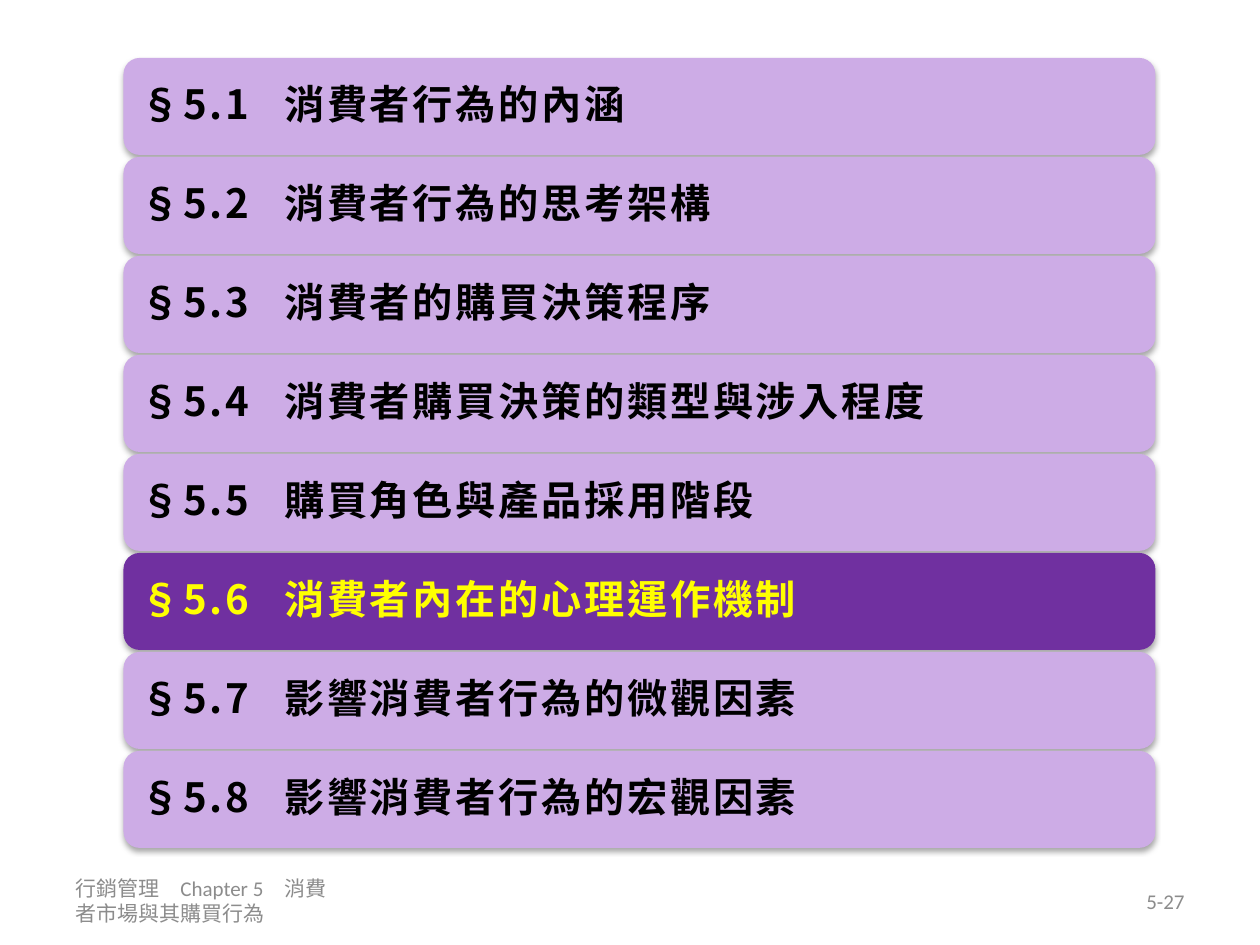
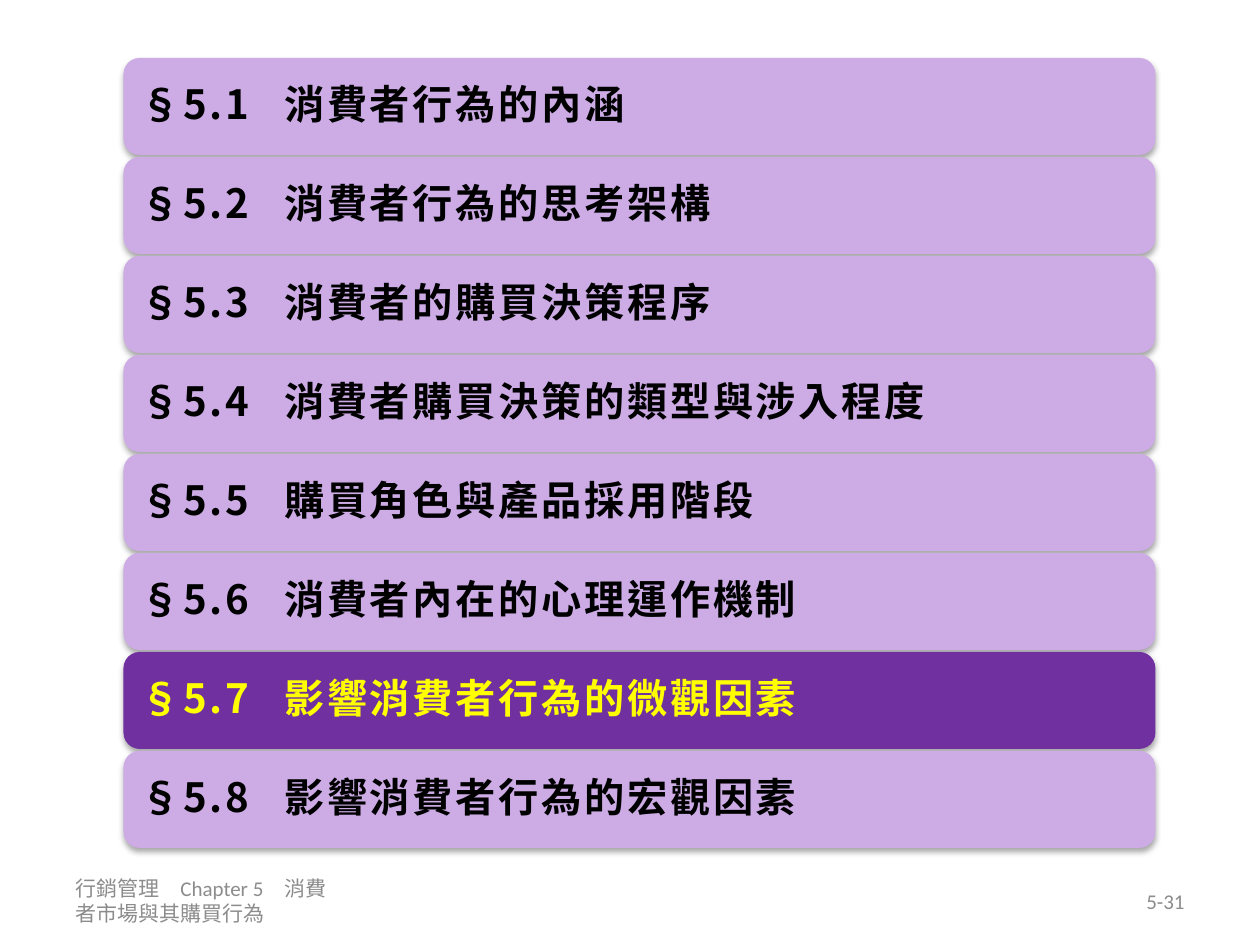
import pptx
import pptx.util
import pptx.dml.color
import pptx.enum.shapes
import pptx.enum.text
import pptx.oxml
import pptx.oxml.ns
from dataclasses import dataclass
from lxml import etree

Inches = pptx.util.Inches
Pt = pptx.util.Pt
qn = pptx.oxml.ns.qn
ALIGN = pptx.enum.text.PP_ALIGN


@dataclass(frozen=True)
class Theme:
    band: str = "CDACE6"
    band_text: str = "000000"
    active: str = "7030A0"
    active_text: str = "FFFF00"
    footer: str = "8C8C8C"
    shadow: str = "000000"
    latin: str = "Calibri"
    cjk: str = "Noto Sans CJK SC"
    band_size: int = 23
    footer_size: int = 12


SECTIONS = [
    "消費者行為的內涵",
    "消費者行為的思考架構",
    "消費者的購買決策程序",
    "消費者購買決策的類型與涉入程度",
    "購買角色與產品採用階段",
    "消費者內在的心理運作機制",
    "影響消費者行為的微觀因素",
    "影響消費者行為的宏觀因素",
]
FOOTER = "行銷管理　Chapter 5　消費者市場與其購買行為"
FIRST_TOP, LAST_TOP = 0.46, 5.96
TITLE_TAB = 1.14

# Slide number and the section highlighted on it
AGENDAS = [("5-27", 6), ("5-31", 7)]


def rgb(value):
    return pptx.dml.color.RGBColor.from_string(value)


class Deck:
    def __init__(self, theme):
        self.theme = theme
        self.prs = pptx.Presentation()
        self.prs.slide_width = Inches(10)
        self.prs.slide_height = Inches(7.5)
        self.s = None

    def new_slide(self):
        self.s = self.prs.slides.add_slide(self.prs.slide_layouts[6])

    def label(self, sp, text, font, size, color, align=ALIGN.LEFT,
              bold=False, spacing=0, tab=None):
        tf = sp.text_frame
        tf.word_wrap = True
        tf.vertical_anchor = pptx.enum.text.MSO_ANCHOR.MIDDLE
        p = tf.paragraphs[0]
        p.alignment = align
        if tab:
            tabs = etree.SubElement(p._p.get_or_add_pPr(), qn("a:tabLst"))
            etree.SubElement(tabs, qn("a:tab"), pos=str(Inches(tab)), algn="l")
        r = p.add_run()
        r.text = text
        p.font.name = font
        p.font.size = Pt(size)
        p.font.bold = bold
        p.font.color.rgb = rgb(color)
        # East Asian font and letter spacing
        rPr = r._r.get_or_add_rPr()
        rPr.set("lang", "zh-TW")
        rPr.set("spc", str(round(spacing * 100)))
        etree.SubElement(rPr, qn("a:ea"), typeface=self.theme.cjk)
        return p

    def shadow(self, sp):
        sp.shadow.inherit = False
        effects = sp._element.spPr.find(qn("a:effectLst"))
        outer = etree.SubElement(
            effects, qn("a:outerShdw"), blurRad=str(Pt(3.1)),
            dist=str(Pt(1.8)), dir="5400000", rotWithShape="0")
        color = etree.SubElement(outer, qn("a:srgbClr"), val=self.theme.shadow)
        etree.SubElement(color, qn("a:alpha"), val="35000")

    def band(self, top, number, title, active):
        t = self.theme
        sp = self.s.shapes.add_shape(
            pptx.enum.shapes.MSO_SHAPE.ROUNDED_RECTANGLE,
            Inches(0.98), Inches(top), Inches(8.19), Inches(0.77))
        sp.fill.solid()
        sp.fill.fore_color.rgb = rgb(t.active if active else t.band)
        sp.line.fill.background()
        self.shadow(sp)
        tf = sp.text_frame
        tf.margin_left = tf.margin_right = Inches(0.1)
        tf.margin_top = tf.margin_bottom = Inches(0.1)
        p = self.label(sp, f"§5.{number}\t{title}", t.cjk, t.band_size,
                       t.active_text if active else t.band_text,
                       bold=True, spacing=1.5, tab=TITLE_TAB)
        p.line_spacing = 0.9

    def footer(self, left, text, align):
        t = self.theme
        sp = self.s.shapes.add_textbox(
            Inches(left), Inches(6.95), Inches(2.33), Inches(0.4))
        self.label(sp, text, t.latin, t.footer_size, t.footer, align)

    def agenda(self, page, current):
        self.new_slide()
        # Footer and slide number
        self.footer(0.5, FOOTER, ALIGN.LEFT)
        self.footer(7.17, page, ALIGN.RIGHT)
        # Section bands at an equal pitch
        pitch = (LAST_TOP - FIRST_TOP) / (len(SECTIONS) - 1)
        for i, title in enumerate(SECTIONS):
            self.band(FIRST_TOP + i * pitch, i + 1, title, i + 1 == current)


def main():
    deck = Deck(Theme())
    for page, current in AGENDAS:
        deck.agenda(page, current)
    deck.prs.save("out.pptx")


if __name__ == "__main__":
    main()
